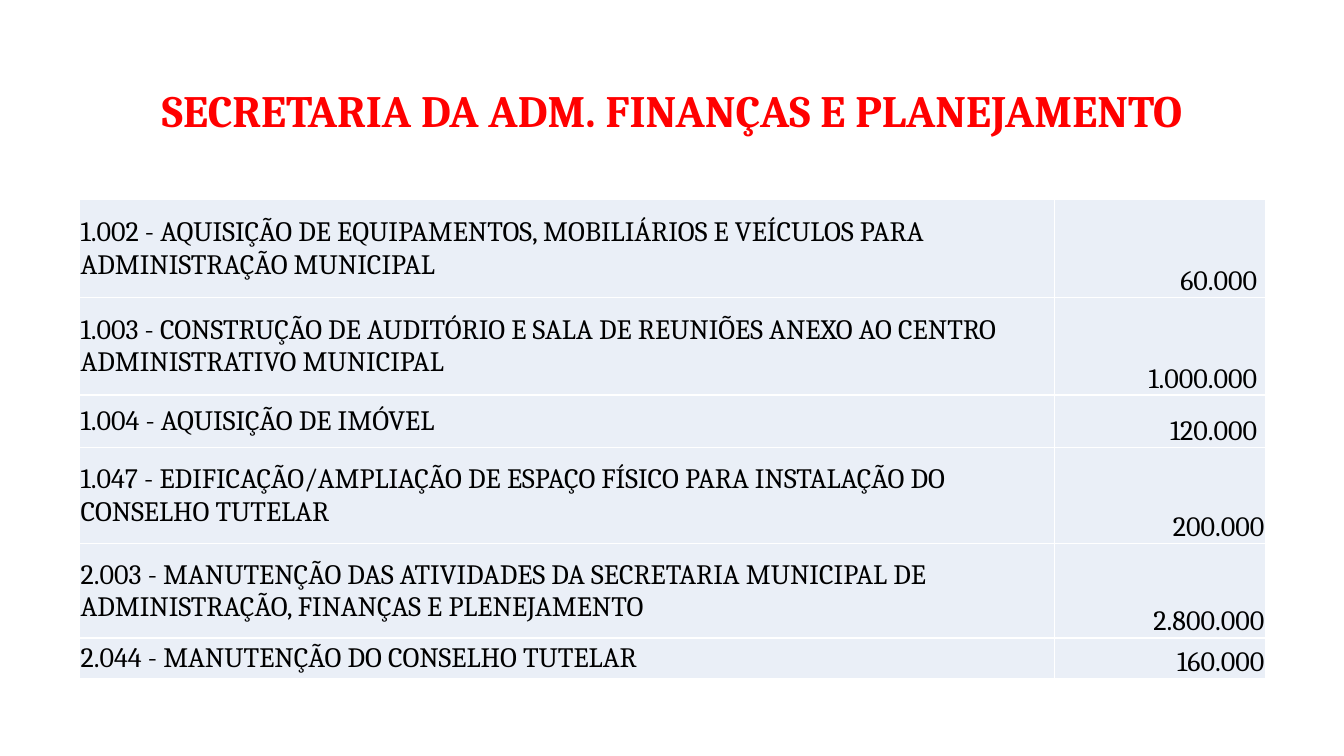
from lxml.etree import SubElement
from pptx import Presentation
from pptx.dml.color import RGBColor
from pptx.enum.text import MSO_ANCHOR as Anchor, PP_ALIGN as Align
from pptx.oxml.ns import qn
from pptx.util import Inches, Pt

RED = RGBColor(0xFF, 0x00, 0x00)
BLACK = RGBColor(0x00, 0x00, 0x00)
WHITE = RGBColor(0xFF, 0xFF, 0xFF)
PALE_BLUE = RGBColor(0xEA, 0xEF, 0xF7)

EDGE = 0.01
INDENT = 0.08
COLUMN_WIDTHS = [9.67, 2.09]
BUDGET = [
    ("1.002 - AQUISIÇÃO DE EQUIPAMENTOS, MOBILIÁRIOS E VEÍCULOS PARA ADMINISTRAÇÃO MUNICIPAL",
     "60.000", 0.97, INDENT),
    ("1.003 - CONSTRUÇÃO DE AUDITÓRIO E SALA DE REUNIÕES ANEXO AO CENTRO ADMINISTRATIVO MUNICIPAL",
     "1.000.000", 0.97, INDENT),
    ("1.004 - AQUISIÇÃO DE IMÓVEL", "120.000", 0.52, INDENT),
    ("1.047 - EDIFICAÇÃO/AMPLIAÇÃO DE ESPAÇO FÍSICO PARA INSTALAÇÃO DO CONSELHO TUTELAR",
     "200.000", 0.95, EDGE),
    ("2.003 - MANUTENÇÃO DAS ATIVIDADES DA SECRETARIA MUNICIPAL DE ADMINISTRAÇÃO, FINANÇAS E PLENEJAMENTO",
     "2.800.000", 0.94, EDGE),
    ("2.044 - MANUTENÇÃO DO CONSELHO TUTELAR", "160.000", 0.4, EDGE),
]


class BudgetSlide:
    """Holds the typeface and the current slide, and adds its elements."""

    def __init__(self, page, typeface):
        self.page = page
        self.typeface = typeface

    def set_text(self, frame, text, size, color, align, bold=False):
        frame.text = text
        para = frame.paragraphs[0]
        para.alignment = align
        font = para.runs[0].font
        font.name, font.size, font.bold = self.typeface, Pt(size), bold
        font.color.rgb = color
        return para

    def title(self, text, left, top, width, height):
        box = self.page.shapes.title
        box.left, box.top = Inches(left), Inches(top)
        box.width, box.height = Inches(width), Inches(height)
        box.text_frame.vertical_anchor = Anchor.MIDDLE
        para = self.set_text(box.text_frame, text, 32, RED, Align.CENTER, True)
        para.line_spacing = 0.9

    def border(self, cell):
        properties = cell._tc.get_or_add_tcPr()
        for side in ("a:lnL", "a:lnR", "a:lnT", "a:lnB"):
            line = SubElement(properties, qn(side), w=str(Pt(1)))
            fill = SubElement(line, qn("a:solidFill"))
            SubElement(fill, qn("a:srgbClr"), val=str(WHITE))

    def cell(self, cell, text, align, anchor, right=EDGE):
        self.border(cell)
        cell.fill.solid()
        cell.fill.fore_color.rgb = PALE_BLUE
        cell.margin_left = cell.margin_top = Inches(EDGE)
        cell.margin_right, cell.margin_bottom = Inches(right), 0
        cell.vertical_anchor = anchor
        self.set_text(cell.text_frame, text, 20, BLACK, align)

    def table(self, entries, left, top):
        width = sum(COLUMN_WIDTHS)
        height = sum(entry[2] for entry in entries)
        table = self.page.shapes.add_table(
            len(entries), len(COLUMN_WIDTHS),
            Inches(left), Inches(top), Inches(width), Inches(height)).table
        table.first_row = table.horz_banding = False
        for column, column_width in zip(table.columns, COLUMN_WIDTHS):
            column.width = Inches(column_width)
        for row, (action, amount, row_height, right) in zip(table.rows, entries):
            row.height = Inches(row_height)
            self.cell(row.cells[0], action, Align.LEFT, Anchor.MIDDLE)
            self.cell(row.cells[1], amount, Align.RIGHT, Anchor.BOTTOM, right)


def main():
    deck = Presentation()
    deck.slide_width, deck.slide_height = Inches(13.33), Inches(7.5)
    page = deck.slides.add_slide(deck.slide_layouts[5])
    slide = BudgetSlide(page, "Cambria")
    slide.title("SECRETARIA DA ADM. FINANÇAS E PLANEJAMENTO", 0.92, 0.4, 11.5, 1.45)
    slide.table(BUDGET, 0.79, 1.98)
    deck.save("out.pptx")


if __name__ == "__main__":
    main()
